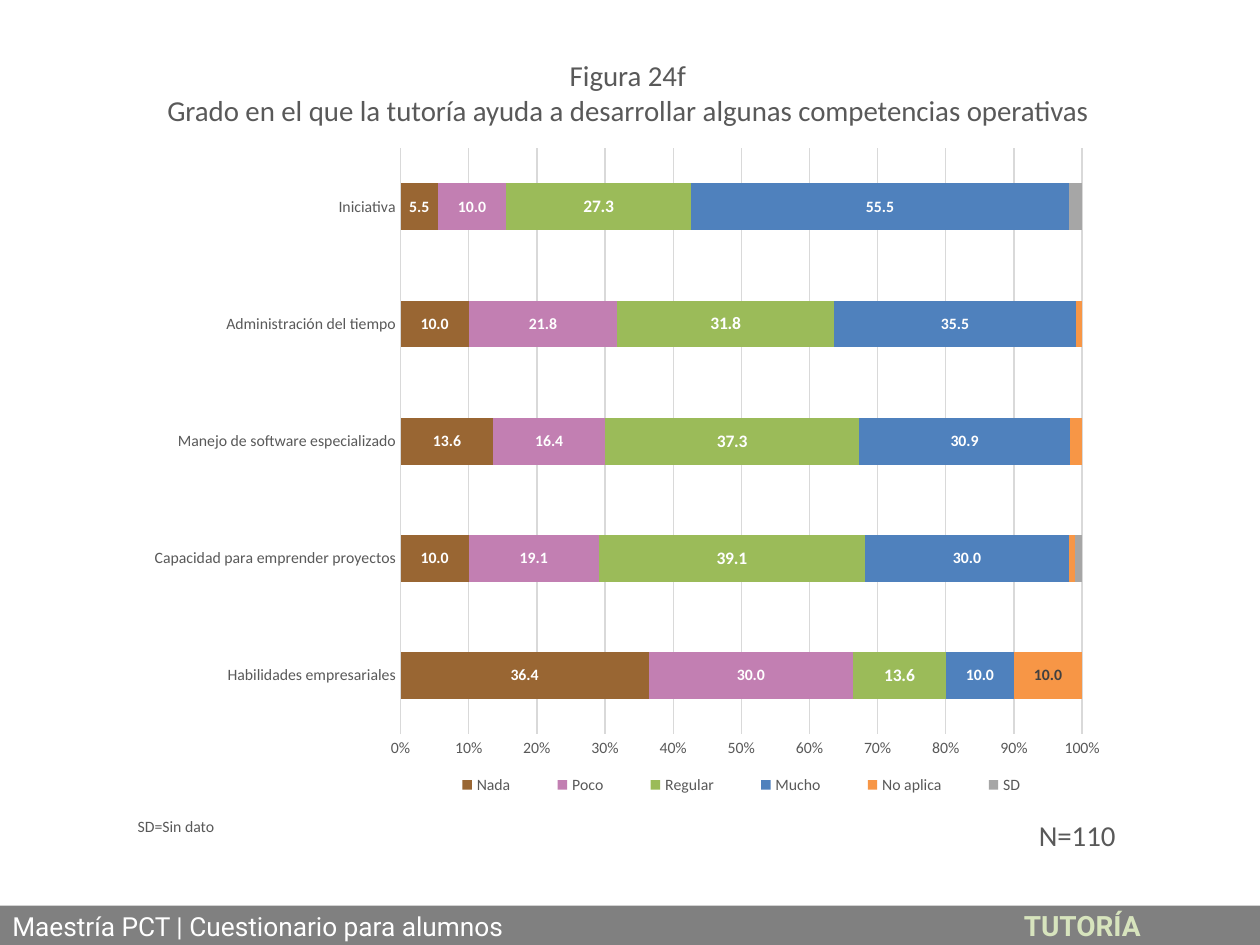
from dataclasses import dataclass

from lxml import etree
from pptx import Presentation
from pptx.chart import data as cd
from pptx.dml.color import RGBColor
from pptx.enum import chart as ch, shapes, text
from pptx.oxml import ns
from pptx.util import Pt


@dataclass(frozen=True)
class Theme:
    face: str = "Calibri"
    foot: str = "Roboto"
    ink: str = "595959"
    dark: str = "404040"
    white: str = "FFFFFF"
    grid: str = "D9D9D9"
    band: str = "808080"
    tag: str = "D7E4BD"
    small: float = 9
    label: float = 10
    head: float = 16.5
    unit: float = 15
    topic: float = 16


T = Theme()
CATS = ["Habilidades empresariales", "Capacidad para emprender proyectos",
        "Manejo de software especializado", "Administración del tiempo",
        "Iniciativa"]
# Name, colour, values, label size (None: no labels for the series)
ROWS = [
    ("Nada", "996633", (36.4, 10, 13.6, 10, 5.5), T.small),
    ("Poco", "C27FB2", (30, 19.1, 16.4, 21.8, 10), T.small),
    ("Regular", "9BBB59", (13.6, 39.1, 37.3, 31.8, 27.3), T.label),
    ("Mucho", "4F81BD", (10, 30, 30.9, 35.5, 55.5), T.small),
    ("No aplica", "F79646", (10, 0.9, 1.8, 0.9, 0), None),
    ("SD", "A6A6A6", (0, 1, 0, 0, 2), None),
]


def style(font, size, color, bold=False, face=T.face):
    font.name, font.size, font.bold = face, Pt(size), bold
    font.color.rgb = RGBColor.from_string(color)


def paint(fill, color):
    fill.solid()
    fill.fore_color.rgb = RGBColor.from_string(color)


def rule(line):
    line.color.rgb = RGBColor.from_string(T.grid)
    line.width = Pt(0.75)


def add_run(para, words, *look, **more):
    run = para.add_run()
    run.text = words
    style(run.font, *look, **more)


def add_note(slide, box, lines, size, wrap=True):
    """Centred text, one paragraph for each line."""
    frame = slide.shapes.add_textbox(*map(Pt, box)).text_frame
    frame.word_wrap = wrap
    for i, line in enumerate(lines):
        para = frame.add_paragraph() if i else frame.paragraphs[0]
        para.alignment = text.PP_ALIGN.CENTER
        add_run(para, line, size, T.ink)


def set_layout(part, index, inner=False, **place):
    """Fix a chart part at fractions of the chart area."""
    for old in part.findall(ns.qn("c:layout")):
        part.remove(old)
    layout = etree.Element(ns.qn("c:layout"))
    manual = etree.SubElement(layout, ns.qn("c:manualLayout"))
    items = [("layoutTarget", "inner")] if inner else []
    items += [("xMode", "edge"), ("yMode", "edge"), *place.items()]
    for name, value in items:
        etree.SubElement(manual, ns.qn("c:" + name)).set("val", str(value))
    part.insert(index, layout)


def add_bars(slide, box):
    data = cd.CategoryChartData(number_format="0.0")
    data.categories = CATS
    for name, _, values, _ in ROWS:
        data.add_series(name, values)
    chart = slide.shapes.add_chart(
        ch.XL_CHART_TYPE.BAR_STACKED_100, *map(Pt, box), data).chart
    chart.has_title = False
    style(chart.font, T.small, T.ink)

    # Axes
    cat, val = chart.category_axis, chart.value_axis
    for axis in (cat, val):
        axis.major_tick_mark = axis.minor_tick_mark = ch.XL_TICK_MARK.NONE
        style(axis.tick_labels.font, T.small, T.ink)
    rule(cat.format.line)
    val.format.line.fill.background()
    val.has_major_gridlines = True
    rule(val.major_gridlines.format.line)
    val.tick_labels.number_format = "0%"
    val.tick_labels.number_format_is_linked = False

    # Series and value labels
    plot = chart.plots[0]
    plot.gap_width, plot.overlap = 150, 100
    plot.vary_by_categories = False
    for series, (name, color, _, size) in zip(plot.series, ROWS):
        paint(series.format.fill, color)
        series.invert_if_negative = False
        if size:
            labels = series.data_labels
            labels.show_value = True
            labels.number_format = "0.0"
            labels.number_format_is_linked = False
            style(labels.font, size, T.white, True)
        elif name == "No aplica":
            style(series.points[0].data_label.font, T.small, T.dark, True)
            series.data_labels.show_value = False

    # Legend and plot position
    chart.has_legend = True
    legend = chart.legend
    legend.position = ch.XL_LEGEND_POSITION.BOTTOM
    legend.include_in_layout = False
    style(legend.font, T.small, T.ink)
    set_layout(legend._element, 1, x=0.29, y=0.94, w=0.65, h=0.05)
    set_layout(plot._element.getparent(), 0, True,
               x=0.27, y=0.02, w=0.69, h=0.87)


def add_footer(slide, box):
    band = slide.shapes.add_shape(shapes.MSO_SHAPE.RECTANGLE, *map(Pt, box))
    band.shadow.inherit = False
    paint(band.fill, T.band)
    band.line.fill.background()
    frame = band.text_frame
    frame.word_wrap = True
    frame.vertical_anchor = text.MSO_ANCHOR.MIDDLE
    para = frame.paragraphs[0]
    para.alignment = text.PP_ALIGN.LEFT
    tabs = etree.SubElement(para._p.get_or_add_pPr(), ns.qn("a:tabLst"))
    tab = etree.SubElement(tabs, ns.qn("a:tab"))
    tab.set("pos", str(Pt(578)))
    tab.set("algn", "l")
    add_run(para, "Maestría PCT | Cuestionario para alumnos\t",
            T.unit, T.white, face=T.foot)
    add_run(para, "TUTORÍA", T.topic, T.tag, True, face=T.foot)


def main():
    deck = Presentation()
    deck.slide_width, deck.slide_height = Pt(720), Pt(540)
    slide = deck.slides.add_slide(deck.slide_layouts[6])
    add_note(slide, (586, 463.5, 59, 27), ["N=110"], T.head, wrap=False)
    add_footer(slide, (0, 517.5, 720, 22.5))
    add_note(slide, (67, 463, 67, 18), ["SD=Sin dato"], T.small)
    add_bars(slide, (76.5, 77, 564.5, 385))
    add_note(slide, (76.5, 29.5, 564.5, 67), [
        "Figura 24f",
        "Grado en el que la tutoría ayuda a desarrollar algunas "
        "competencias operativas"], T.head)
    deck.save("out.pptx")


if __name__ == "__main__":
    main()
